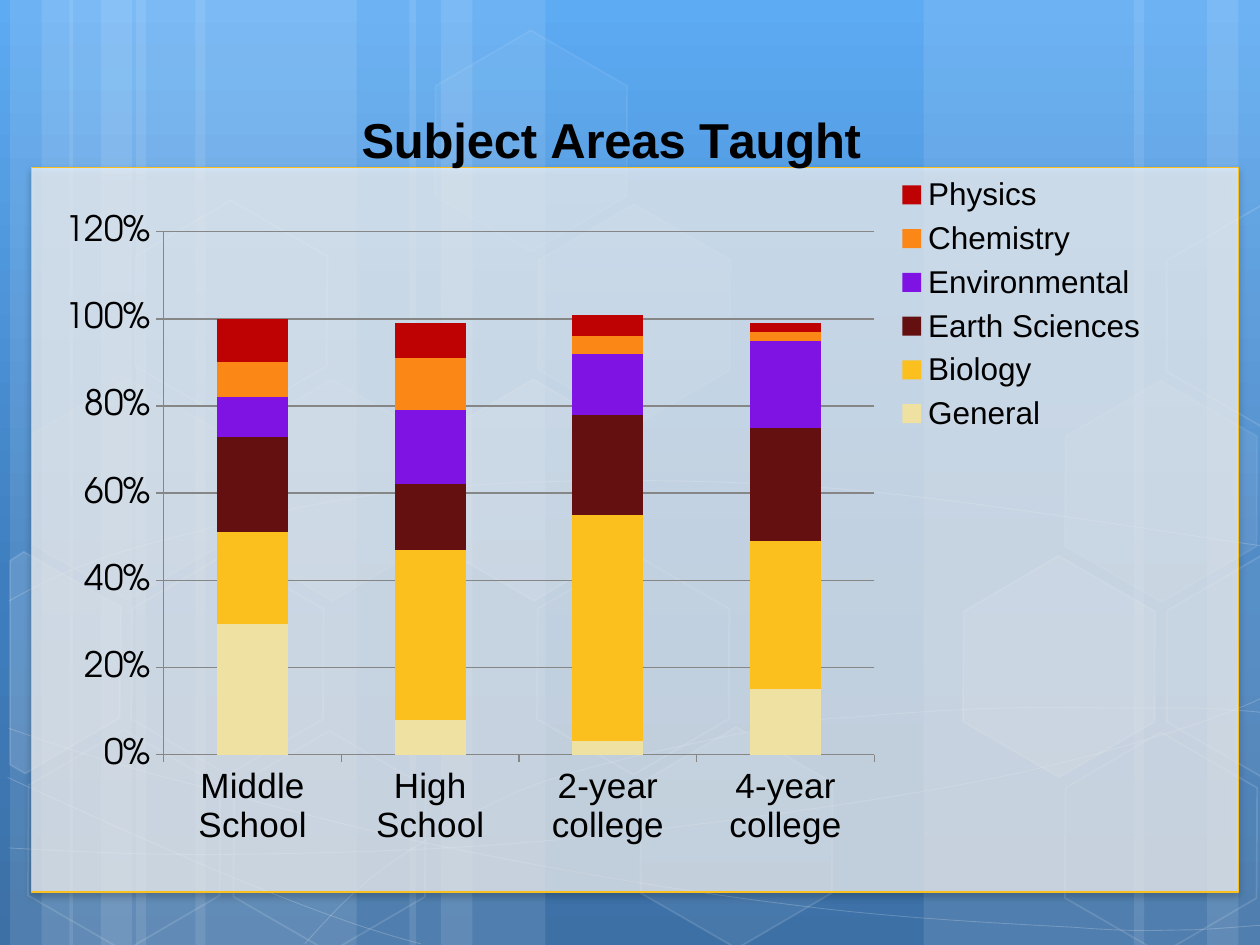
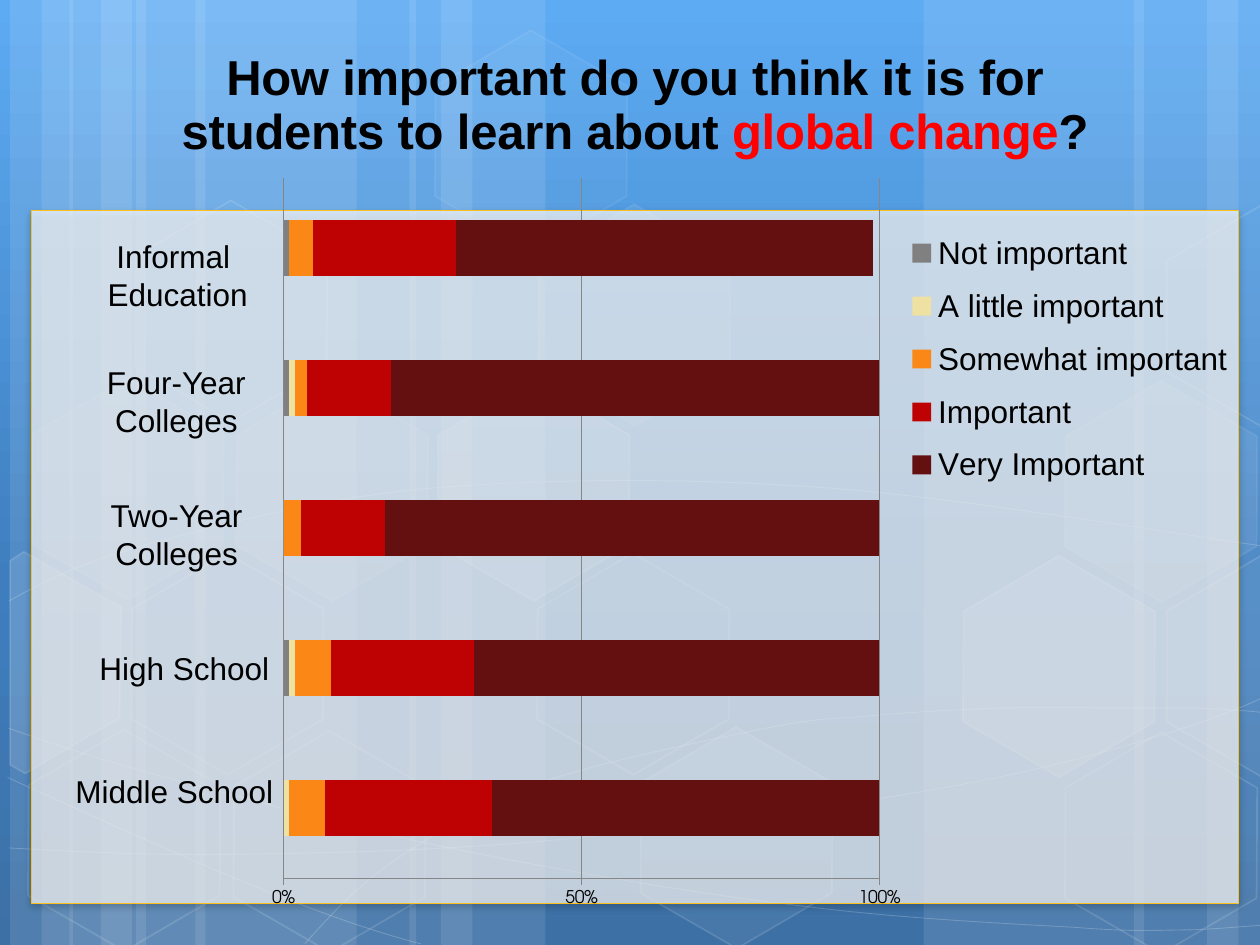
"""Build two survey chart slides on a shared blue hexagon backdrop."""
from copy import deepcopy
from lxml import etree
from pptx import Presentation
from pptx import util as u
from pptx.chart.data import CategoryChartData
from pptx.dml.color import RGBColor
from pptx.enum import chart as charts, shapes, text
from pptx.oxml.ns import qn


class Theme:
    sky = [(0, "5DABF3"), (0.62, "3E7EBF"), (1, "3D70A5")]
    white, black, red, grid = "FFFFFF", "000000", "FF0000", "868686"
    gold, cream, wine, rust = "FBC01E", "EFE1A2", "640F10", "BE0204"
    orange, violet, grey = "FA8716", "7E13E3", "808080"
    sans, round = "Arial", "TeX Gyre Adventor"
    title, axis, label, small = u.Pt(28), u.Pt(20), u.Pt(18), u.Pt(10)


def paint(shape, fill=0, edge=0, width=1, hue=Theme.white):
    shape.shadow.inherit = False
    parts = [(shape.fill, "a:solidFill", fill, Theme.white),
             (shape.line.fill, "a:ln/a:solidFill", edge, hue)]
    for part, tag, alpha, tone in parts:
        if not alpha:
            part.background()
            continue
        part.solid()
        part.fore_color.rgb = RGBColor.from_string(tone)
        if alpha < 100:
            route = "/".join(qn(step) for step in tag.split("/"))
            node = shape.element.spPr.find(route)[0]
            etree.SubElement(node, qn("a:alpha"), val=str(alpha * 1000))
    if edge:
        shape.line.width = u.Pt(width)


def place(node, index, box, frame, inner=False):
    old = node.find(qn("c:layout"))
    if old is not None:
        node.remove(old)
    layout = etree.Element(qn("c:layout"))
    node.insert(index, layout)
    manual = etree.SubElement(layout, qn("c:manualLayout"))
    left, top, width, height = frame
    spots = zip("xywh", box, (left, top, 0, 0), (width, height) * 2)
    rules = [("layoutTarget", "inner")] if inner else []
    rules += [("xMode", "edge"), ("yMode", "edge")]
    rules += [(name, (at - zero) / full) for name, at, zero, full in spots]
    for name, val in rules:
        etree.SubElement(manual, qn("c:" + name), val=str(val))


deck = Presentation()
deck.slide_width, deck.slide_height = u.Inches(10), u.Inches(7.5)
blank = deck.slide_layouts[6]
for spare in list(blank.placeholders):
    blank.shapes.element.remove(spare.element)
pages = [deck.slides.add_slide(blank) for _ in range(2)]

back = blank.background.fill
back.gradient()
back.gradient_angle = 270
stops = blank.element.find(".//" + qn("a:gsLst"))
stops.append(deepcopy(stops[-1]))
for stop, (spot, hue) in zip(back.gradient_stops, Theme.sky):
    stop.position = spot
    stop.color.rgb = RGBColor.from_string(hue)

bands = [(1.08, 1.75), (0.08, 0.5), (0.33, 0.83), (1.55, 1.75),
         (0.55, 0.5), (0.8, 0.83), (7.33, 1.75), (9.58, 0.5),
         (9, 0.83), (3.25, 0.5), (3.5, 0.83)]
waves = [
    [(0.07, 6.73), (0.61, 6.76), (1.15, 6.79), (1.9, 6.78), (2.65, 6.77),
     (3.58, 6.75), (4.58, 6.65), (5.58, 6.55), (7, 6.36), (7.92, 6.17),
     (8.83, 5.98), (9.77, 5.68), (10.07, 5.51)],
    [(0.07, 4.77), (0.36, 4.61), (0.65, 4.46), (1.21, 4.31), (1.78, 4.16),
     (2.59, 3.94), (3.47, 3.87), (4.36, 3.8), (5.44, 3.79), (6.54, 3.87),
     (7.64, 3.95), (9.47, 4.26), (10.07, 4.34)],
    [(0.06, 6.17), (1.27, 6.72), (2.47, 7.27), (3.34, 7.49)],
    [(0.07, 5.78), (0.38, 5.89), (0.7, 6), (1.28, 6.16), (1.86, 6.31),
     (2.73, 6.56), (3.57, 6.73), (4.4, 6.9), (5.45, 7.08), (6.28, 7.18),
     (7.11, 7.29), (8, 7.33), (8.53, 7.36), (9.05, 7.4), (9.19, 7.38),
     (9.45, 7.38), (9.71, 7.37), (9.89, 7.35), (10.07, 7.34)],
    [(2.42, 7.49), (2.6, 7.29), (2.78, 7.09), (3.02, 6.91), (3.26, 6.73),
     (3.6, 6.53), (3.88, 6.39), (4.16, 6.25), (4.33, 6.19), (4.7, 6.09),
     (5.06, 5.99), (5.73, 5.85), (6.08, 5.78), (6.44, 5.71), (6.49, 5.71),
     (6.8, 5.69), (7.11, 5.66), (7.6, 5.63), (7.94, 5.62), (8.29, 5.61),
     (8.86, 5.62), (8.86, 5.62), (8.86, 5.62), (9.53, 5.62), (9.53, 5.62),
     (9.71, 5.63), (9.88, 5.64), (9.97, 5.65), (10.06, 5.66),
     (10.03, 5.65), (10.06, 5.66)],
]
cells = [(3.36, 3.13, 10, 12), (4.15, 4.51, 0, 12), (4.16, 1.74, 7, 8),
         (3.34, 0.36, 4, 8), (4.97, 5.89, 6, 12), (0.11, 5.91, 0, 12),
         (0.14, 3.12, 7, 8), (0.93, 4.51, 0, 12), (1.74, 5.92, 0, 12),
         (1.76, 3.13, 7, 8), (0.96, 1.71, 0, 12), (7.53, 4.53, 10, 12),
         (8.34, 5.93, 0, 12), (8.34, 3.14, 7, 8)]
cuts = [
    (10, [(0.08, 4.45), (0.19, 4.38), (0.96, 4.82), (0.95, 5.7),
          (0.2, 6.14), (0.08, 6.07)]),
    (4, [(9.26, 4.85), (10.01, 4.41), (10.09, 4.46), (10.09, 6.13),
         (10.02, 6.17), (9.26, 5.73)]),
    (0, [(9.26, 2.07), (10.01, 1.63), (10.1, 1.68), (10.09, 3.35),
         (10.02, 3.39), (9.26, 2.95)]),
]

draft = pages[0].shapes
for left, width in bands:
    band = draft.add_shape(shapes.MSO_SHAPE.RECTANGLE, u.Inches(left), 0,
                           u.Inches(width), deck.slide_height)
    paint(band, fill=10)

lines = [(wave, False, 0, 20, 0.5) for wave in waves]
lines += [(dots, True, fill, 12, 1) for fill, dots in cuts]
for dots, close, fill, edge, width in lines:
    dots = [(u.Inches(x), u.Inches(y)) for x, y in dots]
    pen = draft.build_freeform(*dots[0])
    pen.add_line_segments(dots[1:], close=close)
    shape = pen.convert_to_shape()
    paint(shape, fill, edge, width)
    if not close:
        track = shape.element.find(".//" + qn("a:path"))
        steps = track.findall(qn("a:lnTo"))
        for i in range(0, len(steps), 3):
            curve = etree.SubElement(track, qn("a:cubicBezTo"))
            for step in steps[i:i + 3]:
                curve.append(step[0])
                track.remove(step)

for left, top, fill, edge in cells:
    cell = draft.add_shape(shapes.MSO_SHAPE.HEXAGON, u.Inches(left),
                           u.Inches(top), u.Inches(1.75), u.Inches(1.52))
    cell.adjustments[0] = 0.285
    cell.rotation = 30
    paint(cell, fill, edge)

for shape in list(draft):
    blank.shapes.element.append(shape.element)

plans = [
    dict(panel=(1.33, 5.75), box=(0.33, 0.75, 8.92, 6.08),
         kind=charts.XL_CHART_TYPE.COLUMN_STACKED,
         title=[("Subject Areas Taught", Theme.black)], head=(2.8, 0.8),
         cats=["Middle School", "High School", "2-year college",
               "4-year college"],
         rows=[("General", Theme.cream, (0.3, 0.08, 0.03, 0.15)),
               ("Biology", Theme.gold, (0.21, 0.39, 0.52, 0.34)),
               ("Earth Sciences", Theme.wine, (0.22, 0.15, 0.23, 0.26)),
               ("Environmental", Theme.violet, (0.09, 0.17, 0.14, 0.2)),
               ("Chemistry", Theme.orange, (0.08, 0.12, 0.04, 0.02)),
               ("Physics", Theme.rust, (0.1, 0.08, 0.05, 0.02))],
         plot=(1.3, 1.84, 5.64, 4.15), key=(7.08, 1.34, 2.05, 2.15),
         top=1.2, step=0.2, size=Theme.axis, show=True, thin=0.75),
    dict(panel=(1.67, 5.5), box=(0.08, 0.17, 9.92, 7.08),
         kind=charts.XL_CHART_TYPE.BAR_STACKED,
         title=[("How important do you think it is for students to learn "
                 "about ", Theme.black), ("global change", Theme.red),
                ("?", Theme.black)], head=None,
         cats=["1", "2", "3", "4", "5"],
         rows=[("Not important", Theme.grey, (0, 0.01, 0, 0.01, 0.01)),
               ("A little important", Theme.cream, (0.01, 0.01, 0, 0.01, 0)),
               ("Somewhat important", Theme.orange,
                (0.06, 0.06, 0.03, 0.02, 0.04)),
               ("Important", Theme.rust, (0.28, 0.24, 0.14, 0.14, 0.24)),
               ("Very Important", Theme.wine,
                (0.65, 0.69, 0.83, 0.82, 0.7))],
         plot=(2.25, 1.41, 4.73, 5.56), key=(7.1, 1.73, 2.78, 2.24),
         top=1, step=0.5, size=Theme.small, show=False, thin=0.25),
]

for page, plan in zip(pages, plans):
    top, height = plan["panel"]
    panel = page.shapes.add_shape(
        shapes.MSO_SHAPE.RECTANGLE, u.Inches(0.25), u.Inches(top),
        u.Inches(9.58), u.Inches(height))
    paint(panel, 70, 100, 0.75, Theme.gold)
    glow = etree.SubElement(
        panel.element.spPr.find(qn("a:effectLst")), qn("a:outerShdw"),
        blurRad=str(u.Pt(4)), dist=str(u.Pt(2)), dir="5400000",
        rotWithShape="0")
    tint = etree.SubElement(glow, qn("a:srgbClr"), val=Theme.black)
    etree.SubElement(tint, qn("a:alpha"), val="28000")

    data = CategoryChartData(number_format="0%")
    data.categories = plan["cats"]
    for name, _, vals in plan["rows"]:
        data.add_series(name, vals)
    chart = page.shapes.add_chart(
        plan["kind"], *map(u.Inches, plan["box"]), data).chart
    chart.font.name, chart.font.size = Theme.round, Theme.small
    chart.font.color.rgb = RGBColor.from_string(Theme.black)

    chart.has_title = True
    head = chart.chart_title.text_frame.paragraphs[0]
    head.font.name, head.font.size = Theme.sans, Theme.title
    head.font.bold = True
    for words, hue in plan["title"]:
        run = head.add_run()
        run.text = words
        run.font.name, run.font.size = Theme.sans, Theme.title
        run.font.bold = True
        run.font.color.rgb = RGBColor.from_string(hue)
    chart.chart_title.include_in_layout = False

    plot = chart.plots[0]
    plot.gap_width, plot.overlap, plot.vary_by_categories = 150, 100, False
    for bar, (_, hue, _) in zip(plot.series, plan["rows"]):
        bar.format.fill.solid()
        bar.format.fill.fore_color.rgb = RGBColor.from_string(hue)
        bar.invert_if_negative = False

    side, base = chart.value_axis, chart.category_axis
    side.minimum_scale, side.maximum_scale = 0, plan["top"]
    side.major_unit = plan["step"]
    side.has_major_gridlines = True
    side.tick_labels.number_format = "0%"
    side.tick_labels.number_format_is_linked = False
    side.tick_labels.font.size = plan["size"]
    base.visible = plan["show"]
    base.tick_labels.font.name = Theme.sans
    base.tick_labels.font.size = Theme.axis
    for axis in (side, base):
        axis.major_tick_mark = charts.XL_TICK_MARK.OUTSIDE
    for rule in (side, base, side.major_gridlines):
        rule.format.line.color.rgb = RGBColor.from_string(Theme.grid)
        rule.format.line.width = u.Pt(plan["thin"])

    chart.has_legend = True
    key = chart.legend
    key.position = charts.XL_LEGEND_POSITION.RIGHT
    key.include_in_layout = False
    key.font.name, key.font.size = Theme.sans, Theme.label
    key.font.color.rgb = RGBColor.from_string(Theme.black)
    area = chart.element.find(".//" + qn("c:plotArea"))
    body = area.getparent()
    place(area, 0, plan["plot"], plan["box"], inner=True)
    place(body.find(qn("c:legend")), 1, plan["key"], plan["box"])
    if plan["head"]:
        place(body.find(qn("c:title")), 1, plan["head"], plan["box"])

mid, start = text.PP_ALIGN.CENTER, text.PP_ALIGN.LEFT
labels = [(0.75, 1.83, 1.32, [("Informal ", mid), ("Education", mid)]),
          (0.75, 2.83, 1.31, [("Four-Year", start), ("Colleges", mid)]),
          (0.78, 3.89, 1.26, [("Two-Year", start), ("Colleges", mid)]),
          (0.69, 5.1, 1.56, [("High School", start)]),
          (0.5, 6.08, 1.79, [("Middle School", start)])]
for left, top, width, rows in labels:
    height = 0.09 + 0.31 * len(rows)
    frame = pages[1].shapes.add_textbox(
        *map(u.Inches, (left, top, width, height))).text_frame
    frame.word_wrap = False
    frame.auto_size = text.MSO_AUTO_SIZE.SHAPE_TO_FIT_TEXT
    frame.text = "\n".join(words for words, _ in rows)
    for line, (_, align) in zip(frame.paragraphs, rows):
        line.alignment = align
        line.font.name, line.font.size = Theme.sans, Theme.label
        line.font.color.rgb = RGBColor.from_string(Theme.black)

deck.save("out.pptx")
